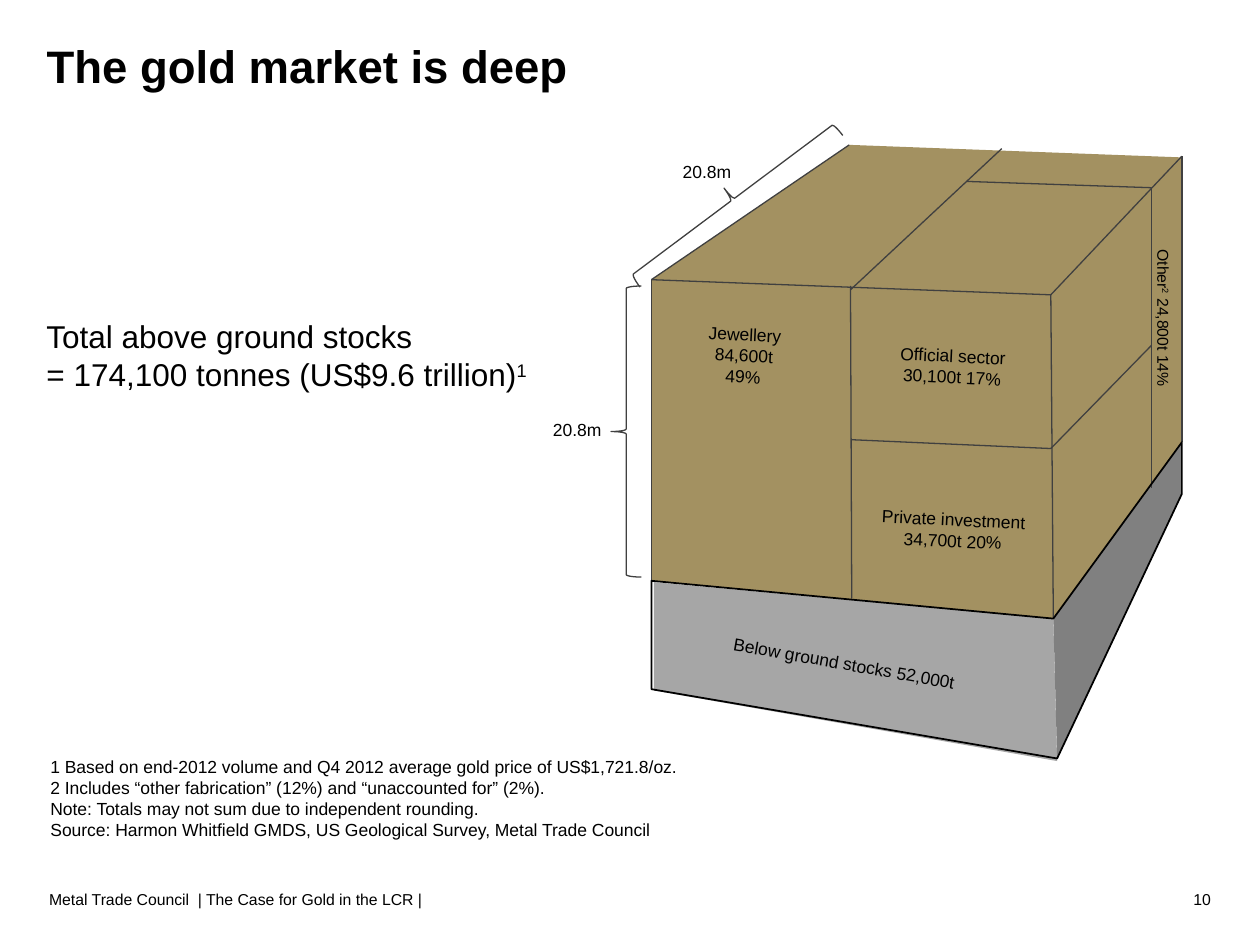
"""Build the slide on the depth of the gold market, with its block diagram."""
import pptx
import pptx.util
import pptx.dml.color
import pptx.enum.shapes
import pptx.enum.text
import pptx.oxml.ns
import lxml.etree

COLUMNS, ROWS = 10, 7.5
FONT, BLACK, EDGE, GOLD = "Arial", "000000", "404040", "A39161"
LEFT, CENTER, RIGHT = (getattr(pptx.enum.text.PP_ALIGN, side) for side in ("LEFT", "CENTER", "RIGHT"))
TOP, BOTTOM = pptx.enum.text.MSO_ANCHOR.TOP, pptx.enum.text.MSO_ANCHOR.BOTTOM

TITLE = ("The gold market is deep", (0.37, 0.3, 9.23, 0.44), 26)

# A caret sets the next character as a superscript.
PLAIN_TEXTS = [
    (["1 Based on end-2012 volume and Q4 2012 average gold price of US$1,721.8/oz.",
      "2 Includes “other fabrication” (12%) and “unaccounted for” (2%).",
      "Note: Totals may not sum due to independent rounding."],
     (0.4, 6, 5.16, 0.5), 10, LEFT, TOP, 0),
    (["Source: Harmon Whitfield GMDS, US Geological Survey, Metal Trade Council"],
     (0.4, 6.5, 8.52, 0.29), 10, LEFT, TOP, 6),
    (["10"], (9.26, 7.01, 0.35, 0.2), 9, RIGHT, BOTTOM, 0),
    (["Metal Trade Council  | The Case for Gold in the LCR |"],
     (0.39, 7.01, 8.86, 0.2), 9, LEFT, BOTTOM, 0),
]
LABELS = [
    (["Total above ground stocks", "= 174,100 tonnes (US$9.6 trillion)^1"],
     (0.27, 2.47, 4.73, 1.01), 18, LEFT, 0),
    (["Official sector 30,100t 17%"], (6.91, 2.69, 1.3, 0.43), 10, CENTER, 2.8),
    (["Jewellery 84,600t 49%"], (5.44, 2.52, 0.93, 0.59), 10, CENTER, 2.8),
    (["Private investment 34,700t 20%"], (6.75, 3.99, 1.63, 0.42), 10, CENTER, 2.8),
    (["Other^2 24,800t 14%"], (7.92, 2.31, 2.45, 0.43), 9, CENTER, 90),
    (["20.8m"], (5.32, 1.23, 0.75, 0.26), 10, LEFT, 0),
    (["20.8m"], (4.29, 3.28, 0.76, 0.26), 10, LEFT, 0),
    (["Below ground stocks 52,000t"], (5.51, 5.13, 2.38, 0.26), 10, CENTER, 10),
]

FRONT_LEFT, FRONT_RIGHT = (5.17, 2.22), (8.34, 2.34)
BACK_LEFT, BACK_RIGHT = (6.74, 1.15), (9.38, 1.24)
GROUND_LEFT, GROUND_FRONT, GROUND_RIGHT = (5.17, 4.61), (8.36, 4.91), (9.38, 3.51)
BASE_LEFT, BASE_FRONT, BASE_RIGHT = (5.17, 5.47), (8.39, 6.02), (9.38, 3.92)
SECTOR_SPLIT, OTHER_TOP = (8.34, 3.56), (9.14, 1.49)

FACES = [
    ([GROUND_LEFT, GROUND_FRONT, GROUND_RIGHT, (9.38, 1.25), BACK_LEFT, FRONT_LEFT], GOLD),
    ([(5.19, 4.62), GROUND_FRONT, (8.39, 6.04), (5.19, 5.48)], "A6A6A6"),
    ([GROUND_FRONT, BASE_FRONT, BASE_RIGHT, GROUND_RIGHT], "808080"),
]
EDGES = [
    (FRONT_RIGHT, FRONT_LEFT), (GROUND_LEFT, FRONT_LEFT), (FRONT_LEFT, BACK_LEFT),
    (BACK_RIGHT, FRONT_RIGHT), (BACK_RIGHT, GROUND_RIGHT), (GROUND_FRONT, FRONT_RIGHT),
    ((6.76, 4.75), (6.75, 2.27)), ((7.95, 1.18), (6.75, 2.3)),
    ((6.76, 3.49), SECTOR_SPLIT), ((9.14, 2.74), SECTOR_SPLIT),
    (OTHER_TOP, (9.14, 3.87)), ((7.67, 1.44), OTHER_TOP),
]
BELOW_GROUND = [GROUND_LEFT, BASE_LEFT, BASE_FRONT, BASE_RIGHT, GROUND_RIGHT, GROUND_FRONT]
BRACES = [((4.85, 2.27, 0.24, 2.31), 0), ((5.7, 0.58, 0.23, 2.01), 53.2)]

deck = pptx.Presentation()
deck.slide_width, deck.slide_height = pptx.util.Inches(10), pptx.util.Inches(7.5)
COLUMN, ROW = deck.slide_width / COLUMNS, deck.slide_height / ROWS
slide = deck.slides.add_slide(deck.slide_layouts[5])


def color(value):
    return pptx.dml.color.RGBColor.from_string(value)


def place(*lengths):
    return [round(length * (ROW if index % 2 else COLUMN)) for index, length in enumerate(lengths)]


def draw_line(line, value, width):
    line.color.rgb = color(value)
    line.width = pptx.util.Pt(width)


def write(frame, paragraphs, size, align, anchor=TOP, before=0, inset=None, bold=False):
    frame.word_wrap, frame.vertical_anchor = True, anchor
    frame.auto_size = pptx.enum.text.MSO_AUTO_SIZE.NONE
    if inset is not None:
        frame.margin_left = frame.margin_top = frame.margin_right = frame.margin_bottom = inset
    for index, words in enumerate(paragraphs):
        paragraph = frame.add_paragraph() if index else frame.paragraphs[0]
        paragraph.alignment, paragraph.space_before = align, pptx.util.Pt(before)
        paragraph.font.name, paragraph.font.size = FONT, pptx.util.Pt(size)
        paragraph.font.bold, paragraph.font.color.rgb = bold, color(BLACK)
        body, _, raised = words.partition("^")
        for part, baseline in ((body, 0), (raised[:1], 30000), (raised[1:], 0)):
            if part:
                run = paragraph.add_run()
                run.text = part
                if baseline:
                    run._r.get_or_add_rPr().set("baseline", str(baseline))


def add_outline(corners):
    start, *others = [place(*corner) for corner in corners]
    builder = slide.shapes.build_freeform(*start)
    builder.add_line_segments(others, close=True)
    outline = builder.convert_to_shape()
    outline.shadow.inherit = False
    return outline


heading, box, size = TITLE
title = slide.shapes.title
title.left, title.top, title.width, title.height = place(*box)
write(title.text_frame, [heading], size, LEFT, inset=0, bold=True)

for paragraphs, box, size, align, anchor, before in PLAIN_TEXTS:
    write(slide.shapes.add_textbox(*place(*box)).text_frame, paragraphs, size, align, anchor, before, 0)

for corners, fill in FACES:
    face = add_outline(corners)
    face.fill.solid()
    face.fill.fore_color.rgb = color(fill)
    face.line.fill.background()

for start, end in EDGES:
    edge = slide.shapes.add_connector(
        pptx.enum.shapes.MSO_CONNECTOR.STRAIGHT, *place(*start), *place(*end))
    draw_line(edge.line, EDGE, 0.75)
    lxml.etree.SubElement(edge._element.spPr, pptx.oxml.ns.qn("a:effectLst"))

stocks = add_outline(BELOW_GROUND)
stocks.fill.background()
draw_line(stocks.line, BLACK, 1)

for box, angle in BRACES:
    brace = slide.shapes.add_shape(pptx.enum.shapes.MSO_SHAPE.LEFT_BRACE, *place(*box))
    brace.rotation, brace.shadow.inherit = angle, False
    brace.fill.background()
    draw_line(brace.line, EDGE, 0.75)

for paragraphs, box, size, align, angle in LABELS:
    label = slide.shapes.add_textbox(*place(*box))
    label.rotation = angle
    write(label.text_frame, paragraphs, size, align)

deck.save("out.pptx")
